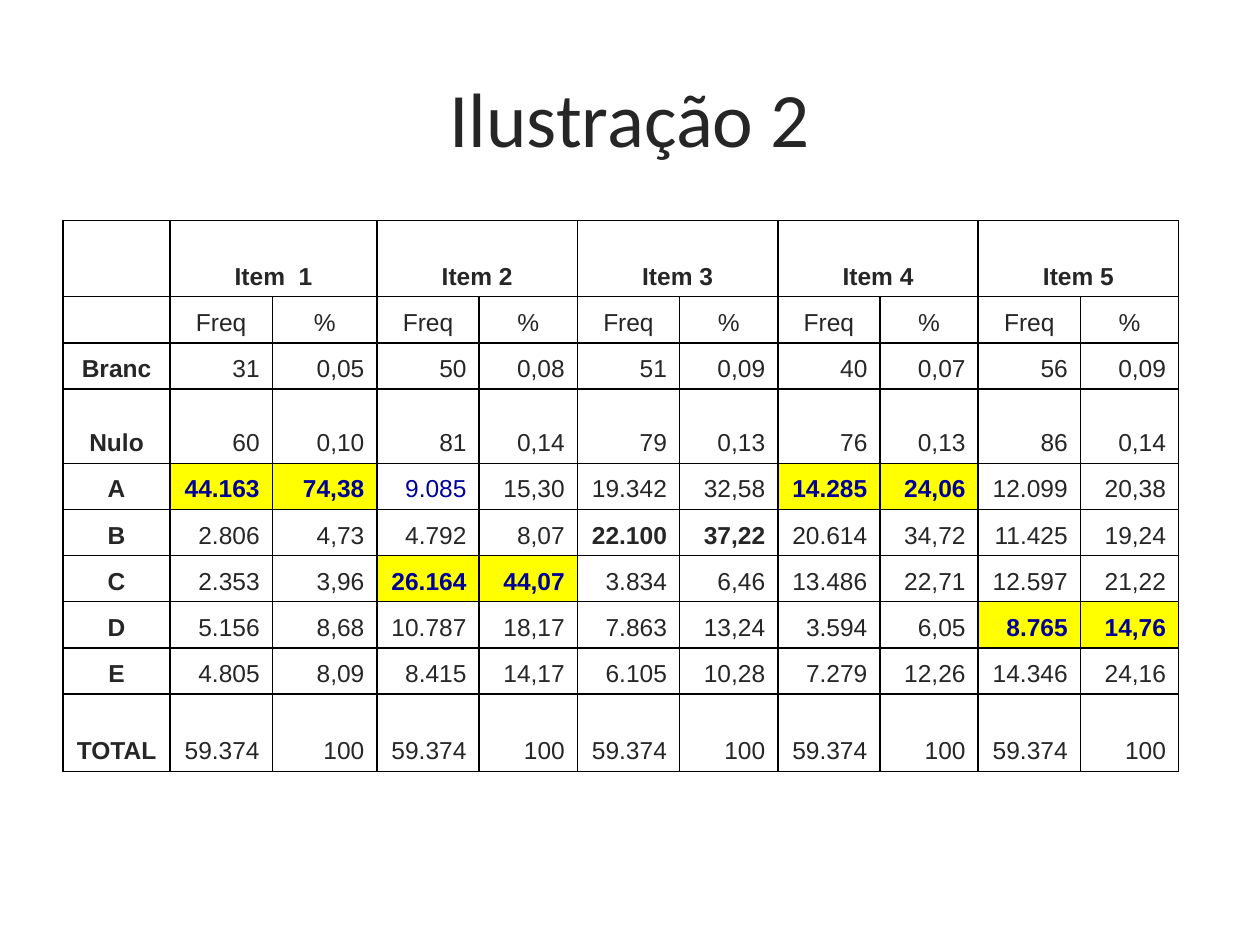
from lxml import etree
from pptx import Presentation
from pptx.dml.color import RGBColor
from pptx.enum.text import MSO_ANCHOR, PP_ALIGN
from pptx.oxml.ns import qn
from pptx.util import Cm, Pt

CENTER, RIGHT = PP_ALIGN.CENTER, PP_ALIGN.RIGHT
MIDDLE, BOTTOM = MSO_ANCHOR.MIDDLE, MSO_ANCHOR.BOTTOM

COLORS = {"text": "262626", "answer": "000099", "highlight": "FFFF00", "border": "000000"}
BODY_SIZE = 14
BORDER_SIDES = ("a:lnL", "a:lnR", "a:lnT", "a:lnB")

ITEMS = ["Item  1", "Item 2", "Item 3", "Item 4", "Item 5"]
MEASURES = ["Freq", "%"]
RESPONSES = [
    ("Branc", "31 0,05 50 0,08 51 0,09 40 0,07 56 0,09"),
    ("Nulo", "60 0,10 81 0,14 79 0,13 76 0,13 86 0,14"),
    ("A", "44.163 74,38 9.085 15,30 19.342 32,58 14.285 24,06 12.099 20,38"),
    ("B", "2.806 4,73 4.792 8,07 22.100 37,22 20.614 34,72 11.425 19,24"),
    ("C", "2.353 3,96 26.164 44,07 3.834 6,46 13.486 22,71 12.597 21,22"),
    ("D", "5.156 8,68 10.787 18,17 7.863 13,24 3.594 6,05 8.765 14,76"),
    ("E", "4.805 8,09 8.415 14,17 6.105 10,28 7.279 12,26 14.346 24,16"),
    ("TOTAL", " ".join(["59.374 100"] * len(ITEMS))),
]
HIGHLIGHTED = {("A", 0), ("C", 1), ("A", 3), ("D", 4)}  # response, item index
BOLD_ONLY = {("B", 2)}
BLUE_VALUES = {"9.085"}

COLUMN_WIDTHS = [2.16, 2.06, 2.11] + [2.06, 1.98] * 4
ROW_HEIGHTS = [1.53, 0.93, 0.93, 1.5] + [0.93] * 5 + [1.56]


def rgb(name):
    return RGBColor.from_string(COLORS[name])


def add_run(paragraph, text, size, font, color="text", bold=False):
    run = paragraph.add_run()
    run.text = text
    run.font.size = Pt(size)
    run.font.name = font
    run.font.bold = bold
    run.font.color.rgb = rgb(color)


def add_title(slide, left, top, width, height):
    frame = slide.shapes.add_textbox(Cm(left), Cm(top), Cm(width), Cm(height)).text_frame
    frame.word_wrap = True
    frame.vertical_anchor = MIDDLE
    paragraph = frame.paragraphs[0]
    paragraph.alignment = CENTER
    add_run(paragraph, "Ilustração 2", 44, "Calibri")


def add_borders(cell):
    properties = cell._tc.get_or_add_tcPr()
    for side in BORDER_SIDES:
        line = etree.SubElement(properties, qn(side), w=str(Pt(1)))
        fill = etree.SubElement(line, qn("a:solidFill"))
        etree.SubElement(fill, qn("a:srgbClr"), val=COLORS["border"])


def fill_cell(cell, text="", align=CENTER, bold=False, color="text", highlight=False):
    add_borders(cell)
    if highlight:
        cell.fill.solid()
        cell.fill.fore_color.rgb = rgb("highlight")
    else:
        cell.fill.background()
    cell.vertical_anchor = BOTTOM
    paragraph = cell.text_frame.paragraphs[0]
    paragraph.alignment = align
    if text:
        add_run(paragraph, text, BODY_SIZE, "Arial", color, bold)
    else:
        # Keep an empty cell from stretching its row
        etree.SubElement(paragraph._p, qn("a:endParaRPr"), sz=str(BODY_SIZE * 100))


def add_frequency_table(slide, left, top):
    table = slide.shapes.add_table(
        len(ROW_HEIGHTS), len(COLUMN_WIDTHS), Cm(left), Cm(top),
        Cm(sum(COLUMN_WIDTHS)), Cm(sum(ROW_HEIGHTS))).table
    table.first_row = table.horz_banding = False
    for column, width in zip(table.columns, COLUMN_WIDTHS):
        column.width = Cm(width)
    for row, height in zip(table.rows, ROW_HEIGHTS):
        row.height = Cm(height)

    # Two header rows: items over their measures
    fill_cell(table.cell(0, 0))
    fill_cell(table.cell(1, 0))
    for item, heading in enumerate(ITEMS):
        first = 1 + item * len(MEASURES)
        for offset, measure in enumerate(MEASURES):
            fill_cell(table.cell(0, first + offset), "" if offset else heading, bold=True)
            fill_cell(table.cell(1, first + offset), measure)
        table.cell(0, first).merge(table.cell(0, first + len(MEASURES) - 1))

    # One row for each response
    for row, (response, values) in enumerate(RESPONSES, start=2):
        fill_cell(table.cell(row, 0), response, bold=True)
        for index, value in enumerate(values.split()):
            key = (response, index // len(MEASURES))
            highlight = key in HIGHLIGHTED
            color = "answer" if highlight or value in BLUE_VALUES else "text"
            fill_cell(table.cell(row, index + 1), value, RIGHT,
                      highlight or key in BOLD_ONLY, color, highlight)


def main():
    presentation = Presentation()
    presentation.slide_width, presentation.slide_height = Cm(25.4), Cm(19.05)
    slide = presentation.slides.add_slide(presentation.slide_layouts[6])
    add_title(slide, 1.27, 0.76, 22.86, 3.18)
    add_frequency_table(slide, 1.27, 4.45)
    presentation.save("out.pptx")


if __name__ == "__main__":
    main()
